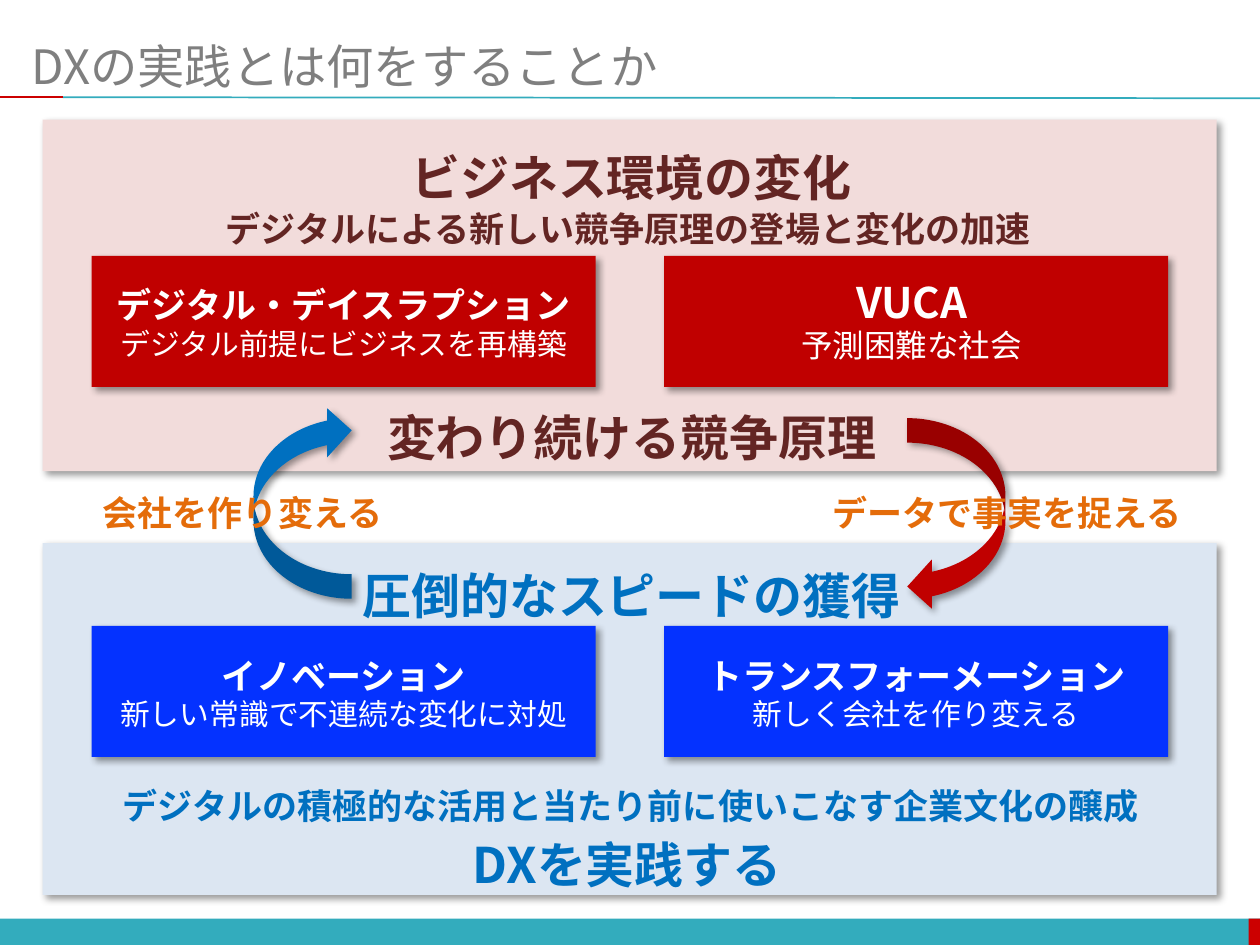
from dataclasses import dataclass

from lxml.etree import SubElement
from pptx import Presentation
from pptx.dml.color import RGBColor
from pptx.enum.shapes import MSO_CONNECTOR, MSO_SHAPE
from pptx.enum.text import MSO_ANCHOR, PP_ALIGN
from pptx.oxml import parse_xml
from pptx.oxml.ns import nsdecls, qn
from pptx.util import Cm, Pt


@dataclass(frozen=True)
class Theme:
    font: str = "Noto Sans CJK JP"
    teal: str = "33ACBD"
    signal: str = "CC0000"
    grey: str = "7F7F7F"
    pink: str = "F2DCDB"
    pale_blue: str = "DCE6F2"
    red: str = "C00000"
    bright_blue: str = "0432FF"
    blue: str = "0070C0"
    maroon: str = "632523"
    orange: str = "E46C0A"
    white: str = "FFFFFF"
    title: int = 27
    heading: int = 28
    lead: int = 24
    label: int = 20
    caption: int = 18
    detail: int = 17


theme = Theme()
SHADOW = (
    f'<a:effectLst {nsdecls("a")}><a:outerShdw blurRad="{Pt(4)}" dist="{Pt(3)}" '
    'dir="2700000" algn="tl" rotWithShape="0"><a:srgbClr val="000000">'
    '<a:alpha val="40000"/></a:srgbClr></a:outerShdw></a:effectLst>'
)
presentation = Presentation()
presentation.slide_width, presentation.slide_height = Cm(25.4), Cm(19.05)
slide = presentation.slides.add_slide(presentation.slide_layouts[5])


def add_block(kind, left, top, width, height, color, shadow=True):
    shape = slide.shapes.add_shape(kind, Cm(left), Cm(top), Cm(width), Cm(height))
    shape.fill.solid()
    shape.fill.fore_color.rgb = RGBColor.from_string(color)
    shape.line.fill.background()
    shape.shadow.inherit = False
    if shadow:
        properties = shape._element.spPr
        properties.replace(properties.find(qn("a:effectLst")), parse_xml(SHADOW))
    return shape


def write(frame, lines, color, alignment=PP_ALIGN.CENTER):
    """Fill a text frame with (text, size, bold) lines."""
    for index, (text, size, bold) in enumerate(lines):
        paragraph = frame.add_paragraph() if index else frame.paragraphs[0]
        paragraph.text = text
        paragraph.alignment = alignment
        font = paragraph.font
        font.name, font.size, font.bold = theme.font, Pt(size), bold
        font.color.rgb = RGBColor.from_string(color)
        east_asian = SubElement(paragraph._p.pPr.find(qn("a:defRPr")), qn("a:ea"))
        east_asian.set("typeface", theme.font)


# Footer band and title rule
for left, width, color in ((0, 25.4, theme.teal), (25.17, 0.25, theme.signal)):
    add_block(MSO_SHAPE.RECTANGLE, left, 18.52, width, 0.56, color, shadow=False)
for start, end, end_top, color in (
    (1.27, 25.4, 1.98, theme.teal),
    (0, 1.27, 1.96, theme.signal),
):
    rule = slide.shapes.add_connector(
        MSO_CONNECTOR.STRAIGHT, Cm(start), Cm(1.96), Cm(end), Cm(end_top))
    rule.line.color.rgb = RGBColor.from_string(color)
    rule.line.width = Pt(1)
    SubElement(rule._element.spPr, qn("a:effectLst"))

# Title
title = slide.shapes.title
title.left, title.top, title.width, title.height = Cm(0.64), Cm(0.74), Cm(24.13), Cm(1.17)
frame = title.text_frame
frame.margin_left = frame.margin_right = 0
frame.vertical_anchor = MSO_ANCHOR.MIDDLE
write(frame, [("DXの実践とは何をすることか", theme.title, False)], theme.grey, PP_ALIGN.LEFT)

# Two panels, each with a pair of cards
card_lefts, card_width = (1.85, 13.39), 10.16
for panel_top, card_top, panel_color, card_color in (
    (2.41, 5.16, theme.pink, theme.red),
    (10.95, 12.62, theme.pale_blue, theme.bright_blue),
):
    add_block(MSO_SHAPE.RECTANGLE, 0.86, panel_top, 23.67, 7.09, panel_color)
    for left in card_lefts:
        add_block(MSO_SHAPE.RECTANGLE, left, card_top, card_width, 2.64, card_color)

# Card texts: a bold name over a plain explanation
for left, top, name, detail in (
    (card_lefts[0], 5.59, "デジタル・デイスラプション", "デジタル前提にビジネスを再構築"),
    (card_lefts[0], 13.06, "イノベーション", "新しい常識で不連続な変化に対処"),
    (card_lefts[1], 13.06, "トランスフォーメーション", "新しく会社を作り変える"),
):
    box = slide.shapes.add_textbox(Cm(left), Cm(top), Cm(card_width), Cm(1.85))
    box.text_frame.word_wrap = True
    write(box.text_frame,
          [(name, theme.label, True), (detail, theme.detail, False)], theme.white)

# Cycle arrows between the panels
rising_arrow = add_block(MSO_SHAPE.CURVED_LEFT_ARROW, 5.11, 8.18, 1.98, 3.89, theme.blue)
rising_arrow.rotation = 180
add_block(MSO_SHAPE.CURVED_LEFT_ARROW, 18.29, 8.43, 1.98, 3.89, theme.red)

# Single-line headings and labels
for text, left, top, width, height, size, bold, color in (
    ("ビジネス環境の変化", 7.98, 2.84, 9.5, 1.45, theme.heading, True, theme.maroon),
    ("デジタルによる新しい競争原理の登場と変化の加速",
     4.22, 4.06, 16.89, 1.12, theme.label, True, theme.maroon),
    ("VUCA", 16.87, 5.44, 3.02, 1.27, theme.lead, True, theme.white),
    ("予測困難な社会", 15.88, 6.45, 5, 1.02, theme.caption, False, theme.white),
    ("変わり続ける競争原理", 7.49, 8.1, 10.49, 1.45, theme.heading, True, theme.maroon),
    ("会社を作り変える", 1.78, 9.78, 6.22, 1.12, theme.label, True, theme.orange),
    ("データで事実を捉える", 16.48, 9.78, 7.65, 1.12, theme.label, True, theme.orange),
    ("圧倒的なスピードの獲得", 6.99, 11.28, 11.48, 1.45, theme.heading, True, theme.blue),
    ("デジタルの積極的な活用と当たり前に使いこなす企業文化の醸成",
     2.13, 15.7, 21.18, 1.12, theme.label, True, theme.blue),
    ("DXを実践する", 9.14, 16.69, 7.01, 1.45, theme.heading, True, theme.blue),
):
    box = slide.shapes.add_textbox(Cm(left), Cm(top), Cm(width), Cm(height))
    box.text_frame.word_wrap = False
    write(box.text_frame, [(text, size, bold)], color)

presentation.save("out.pptx")
